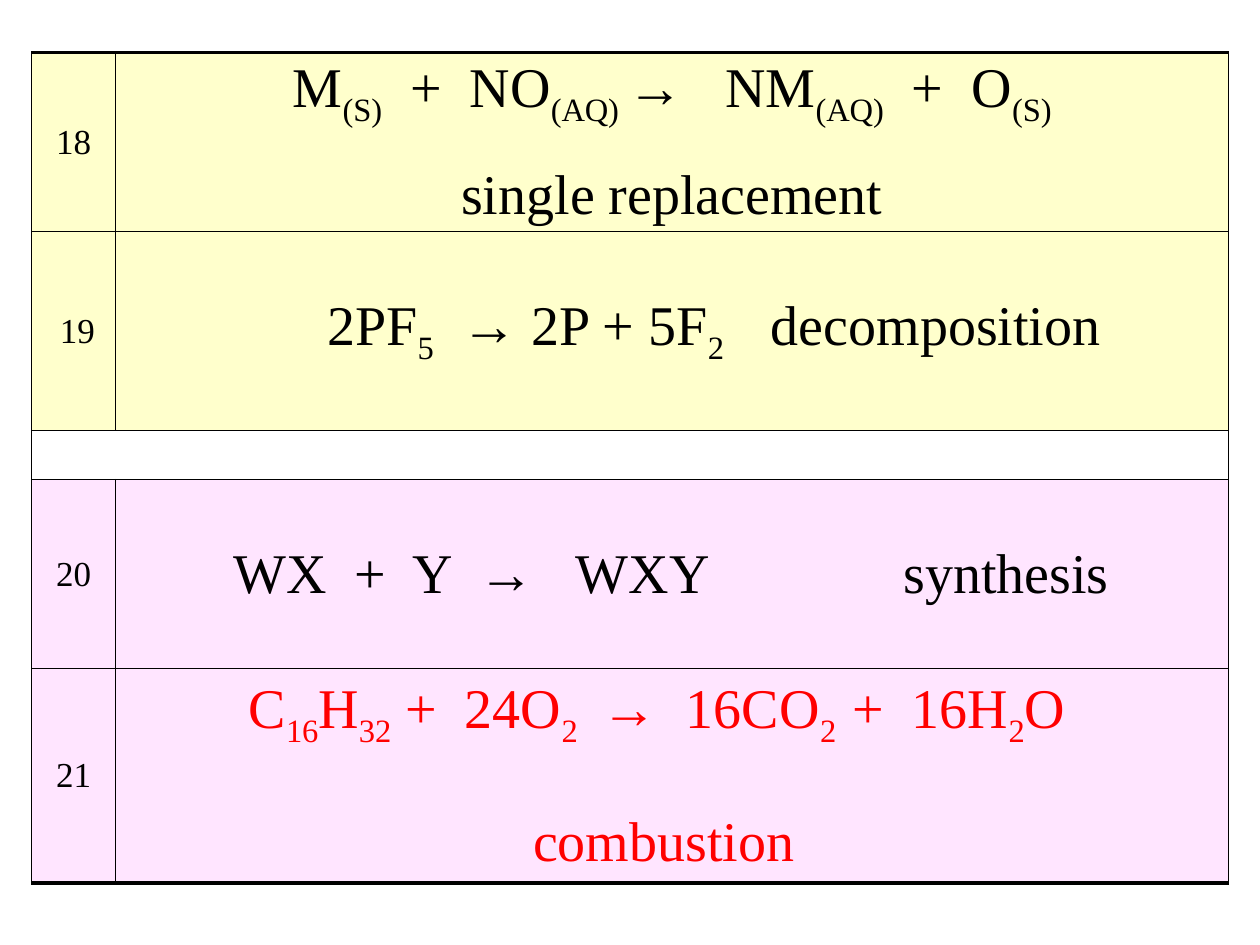
from lxml.etree import SubElement
from pptx import Presentation
from pptx.dml.color import RGBColor
from pptx.enum.text import MSO_ANCHOR, PP_ALIGN
from pptx.oxml.ns import qn
from pptx.util import Cm, Pt

BLACK, RED, YELLOW, PINK = "000000", "FF0000", "FFFFCC", "FFE5FF"
COLUMN_SHARES = (0.07, 0.93)
ROW_HEIGHTS = (3.61, 4.01, 0.99, 3.81, 4.32)
RULE_WIDTHS = (2, 0.25, 1, 1, 1, 2)
PADDING = 0.1

REACTIONS = {
    0: dict(number="18", fill=YELLOW,
            lines=[("M|(S)|  +  NO|(AQ) |→   NM|(AQ)|  +  O|(S)", {}),
                   ("single replacement", dict(before=20.5))]),
    1: dict(number="19", fill=YELLOW, number_left=0.25, left=4.27,
            lines=[("2PF|5|  → 2P + 5F|2|\tdecomposition",
                    dict(align=PP_ALIGN.LEFT, tab=8.94))]),
    3: dict(number="20", fill=PINK, left=2.38,
            lines=[("WX  +  Y  →   WXY\tsynthesis",
                    dict(align=PP_ALIGN.LEFT, tab=13.5))]),
    4: dict(number="21", fill=PINK, right=0.71,
            lines=[("C|16|H|32| +  24O|2   |→  16CO|2  |+  16H|2|O", dict(color=RED)),
                   ("combustion", dict(color=RED, before=35.5, indent=0.28))]),
}


def rgb(value):
    return RGBColor.from_string(value)


def write_text(paragraph, text, size=32, color=BLACK, align=PP_ALIGN.CENTER,
               before=0, indent=0, tab=None):
    paragraph.alignment = align
    paragraph.space_before = Pt(before)
    for position, part in enumerate(text.split("|")):
        if not part:
            continue
        run = paragraph.add_run()
        run.text = part
        run.font.name = "Times New Roman"
        run.font.size = Pt(size)
        run.font.color.rgb = rgb(color)
        if position % 2:
            run.font._element.set("baseline", "-25000")
    properties = paragraph._p.get_or_add_pPr()
    if indent:
        properties.set("marL", str(Cm(indent)))
    if tab:
        stops = SubElement(properties, qn("a:tabLst"))
        SubElement(stops, qn("a:tab"), pos=str(Cm(tab)), algn="l")


def set_borders(cell, top, bottom):
    properties = cell._tc.get_or_add_tcPr()
    widths = {"a:lnL": 1, "a:lnR": 1, "a:lnT": top, "a:lnB": bottom}
    for order, (side, width) in enumerate(widths.items()):
        border = SubElement(properties, qn(side), w=str(Pt(width)))
        fill = SubElement(border, qn("a:solidFill"))
        SubElement(fill, qn("a:srgbClr"), val=BLACK)
        properties.insert(order, border)


def fill_cell(cell, lines, fill, left=PADDING, right=PADDING):
    cell.fill.solid()
    cell.fill.fore_color.rgb = rgb(fill)
    cell.vertical_anchor = MSO_ANCHOR.MIDDLE
    cell.margin_left, cell.margin_right = Cm(left), Cm(right)
    frame = cell.text_frame
    for index, (text, style) in enumerate(lines):
        paragraph = frame.add_paragraph() if index else frame.paragraphs[0]
        write_text(paragraph, text, **style)


def add_reaction_table(slide, left, top, width):
    table = slide.shapes.add_table(
        len(ROW_HEIGHTS), len(COLUMN_SHARES),
        Cm(left), Cm(top), Cm(width), Cm(sum(ROW_HEIGHTS))).table
    table.first_row = table.horz_banding = False
    for column, share in zip(table.columns, COLUMN_SHARES):
        column.width = Cm(width * share)
    for index, height in enumerate(ROW_HEIGHTS):
        table.rows[index].height = Cm(height)
        for cell in table.rows[index].cells:
            cell.fill.background()
            cell.margin_top = cell.margin_bottom = Cm(PADDING)
            set_borders(cell, RULE_WIDTHS[index], RULE_WIDTHS[index + 1])
    table.cell(2, 0).merge(table.cell(2, 1))
    for row, reaction in REACTIONS.items():
        fill_cell(table.cell(row, 0), [(reaction["number"], dict(size=20))],
                  reaction["fill"], left=reaction.get("number_left", PADDING))
        fill_cell(table.cell(row, 1), reaction["lines"], reaction["fill"],
                  reaction.get("left", PADDING), reaction.get("right", PADDING))


def main():
    presentation = Presentation()
    presentation.slide_width, presentation.slide_height = Cm(25.4), Cm(19.05)
    slide = presentation.slides.add_slide(presentation.slide_layouts[6])
    add_reaction_table(slide, left=0.64, top=1.06, width=24.13)
    presentation.save("out.pptx")


if __name__ == "__main__":
    main()
